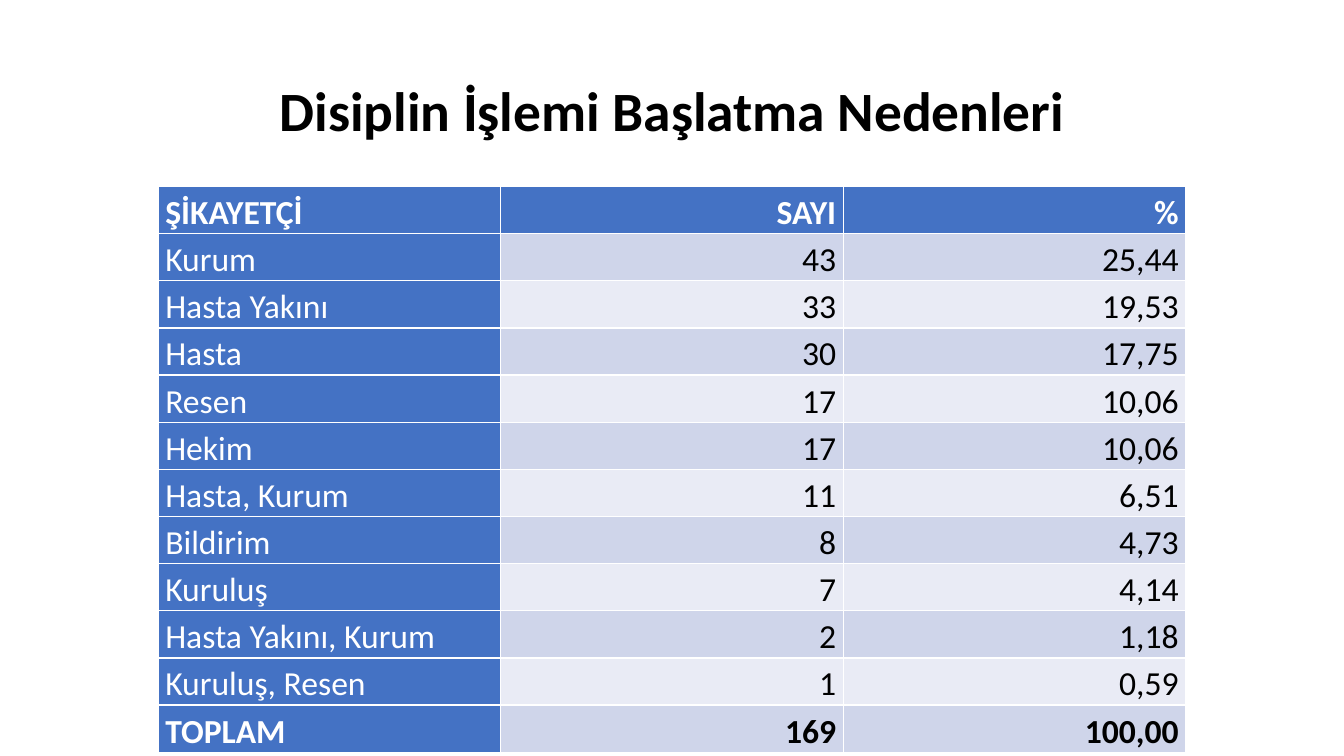
"""Build a slide with a table of the reasons for starting disciplinary action."""
from typing import Any, NamedTuple

from pptx import Presentation
from pptx.dml.color import RGBColor as Rgb
from pptx.enum.text import MSO_ANCHOR as Anchor, PP_ALIGN as Align
from pptx.util import Inches, Pt

COLORS = {
    "heading": "4472C4",
    "odd": "CFD5EA",
    "even": "E9EBF5",
    "light": "FFFFFF",
    "dark": "000000",
}
FONT_NAME = "Calibri"
ROW_HEIGHT = 0.42


class Complaint(NamedTuple):
    """One row of the table."""

    complainant: str
    count: str
    percent: str


COMPLAINTS = [
    Complaint("ŞİKAYETÇİ", "SAYI", "%"),
    Complaint("Kurum", "43", "25,44"),
    Complaint("Hasta Yakını", "33", "19,53"),
    Complaint("Hasta", "30", "17,75"),
    Complaint("Resen", "17", "10,06"),
    Complaint("Hekim", "17", "10,06"),
    Complaint("Hasta, Kurum", "11", "6,51"),
    Complaint("Bildirim", "8", "4,73"),
    Complaint("Kuruluş", "7", "4,14"),
    Complaint("Hasta Yakını, Kurum", "2", "1,18"),
    Complaint("Kuruluş, Resen", "1", "0,59"),
    Complaint("TOPLAM", "169", "100,00"),
]


def apply_format(target: Any, values: dict[str, Any]) -> None:
    """Set every named attribute on the target."""
    for name, value in values.items():
        setattr(target, name, value)


def write_text(frame: Any, text: str, size: float, bold: bool, color: str,
               paragraph_format: dict[str, Any]) -> None:
    """Write one formatted paragraph."""
    paragraph = frame.paragraphs[0]
    apply_format(paragraph, paragraph_format)
    run = paragraph.add_run()
    run.text = text
    apply_format(run.font, {"name": FONT_NAME, "size": Pt(size), "bold": bold})
    run.font.color.rgb = Rgb.from_string(COLORS[color])


def add_heading(slide: Any) -> None:
    """Place and format the title."""
    heading = slide.shapes.title
    apply_format(heading, {"left": Inches(0.92), "top": Inches(0.4),
                           "width": Inches(11.5), "height": Inches(1.45)})
    heading.text_frame.vertical_anchor = Anchor.MIDDLE
    write_text(heading.text_frame, "Disiplin İşlemi Başlatma Nedenleri", 39.6, True, "dark",
               {"alignment": Align.CENTER, "line_spacing": 0.9})


def fill_cell(cell: Any, text: str, row: int, column: int) -> None:
    """Fill a cell according to its place in the table."""
    is_heading = row == 0 or column == 0
    band = "odd" if row % 2 else "even"
    apply_format(cell, {"margin_left": Inches(0.07), "margin_right": Inches(0.07),
                        "margin_top": 0, "margin_bottom": 0})
    cell.fill.solid()
    cell.fill.fore_color.rgb = Rgb.from_string(COLORS["heading" if is_heading else band])
    write_text(cell.text_frame, text, 24, row in (0, len(COMPLAINTS) - 1),
               "light" if is_heading else "dark",
               {"alignment": Align.RIGHT if column else Align.LEFT,
                "line_spacing": 1.15, "space_after": Pt(10)})


def add_complaints(slide: Any) -> None:
    """Add the table of complaints."""
    row_count = len(COMPLAINTS)
    table = slide.shapes.add_table(
        row_count, len(Complaint._fields), Inches(1.57), Inches(1.85),
        Inches(10.19), Inches(ROW_HEIGHT * row_count)).table
    for row, complaint in enumerate(COMPLAINTS):
        for column, text in enumerate(complaint):
            fill_cell(table.cell(row, column), text, row, column)


def main() -> None:
    """Create and save the presentation."""
    presentation = Presentation()
    apply_format(presentation, {"slide_width": Inches(13.33), "slide_height": Inches(7.5)})
    slide = presentation.slides.add_slide(presentation.slide_layouts[5])
    add_heading(slide)
    add_complaints(slide)
    presentation.save("out.pptx")


if __name__ == "__main__":
    main()
